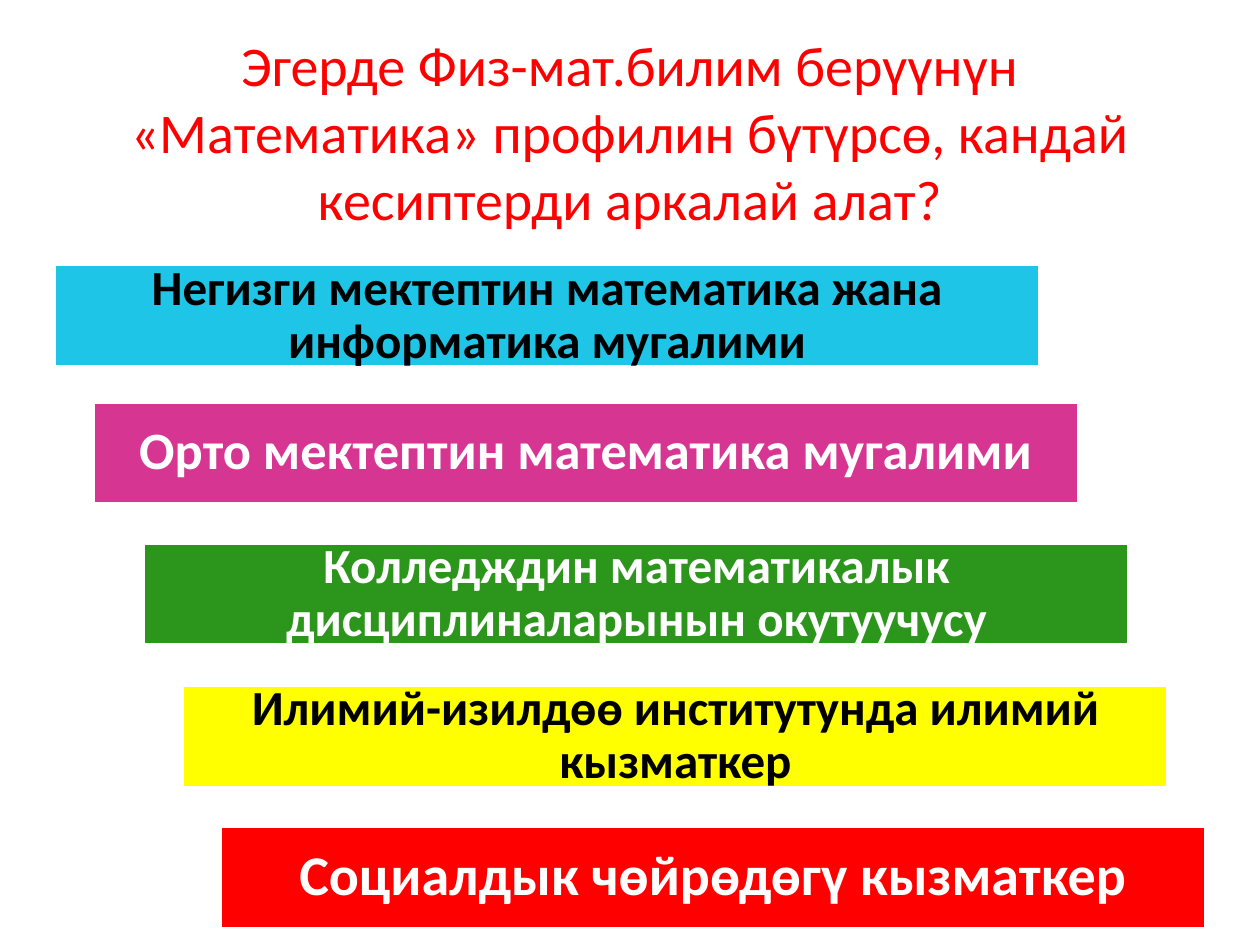
import pptx
import pptx.dml.color
import pptx.enum.shapes
import pptx.enum.text
import pptx.util
from pptx.util import Inches

RGBColor = pptx.dml.color.RGBColor
BLACK = RGBColor(0x00, 0x00, 0x00)
WHITE = RGBColor(0xFF, 0xFF, 0xFF)
RED = RGBColor(0xFF, 0x00, 0x00)
CYAN = RGBColor(0x1E, 0xC5, 0xE6)
PINK = RGBColor(0xD6, 0x36, 0x91)
GREEN = RGBColor(0x2C, 0x95, 0x1B)
YELLOW = RGBColor(0xFF, 0xFF, 0x00)

FONT = "Calibri"
TITLE = ("Эгерде Физ-мат.билим берүүнүн «Математика» профилин бүтүрсө, "
         "кандай кесиптерди аркалай алат?")
BAR_WIDTH, BAR_HEIGHT = 7.82, 0.81
# left, top, fill, text colour, text size, text
PROFESSIONS = [
    (0.43, 2.1, CYAN, BLACK, 28, "Негизги мектептин математика жана информатика мугалими"),
    (0.74, 3.19, PINK, WHITE, 30, "Орто мектептин математика мугалими"),
    (1.14, 4.31, GREEN, WHITE, 28, "Колледждин математикалык дисциплиналарынын окутуучусу"),
    (1.45, 5.44, YELLOW, BLACK, 28, "Илимий-изилдөө институтунда илимий кызматкер"),
    (1.75, 6.56, RED, WHITE, 32, "Социалдык чөйрөдөгү кызматкер"),
]


def write_text(shape, text, size, color, bold=False):
    """Fill the shape with one centred paragraph and return it."""
    frame = shape.text_frame
    frame.text = text
    frame.word_wrap = True
    frame.auto_size = pptx.enum.text.MSO_AUTO_SIZE.NONE
    frame.vertical_anchor = pptx.enum.text.MSO_ANCHOR.MIDDLE
    paragraph = frame.paragraphs[0]
    paragraph.alignment = pptx.enum.text.PP_ALIGN.CENTER
    paragraph.font.name = FONT
    paragraph.font.size = pptx.util.Pt(size)
    paragraph.font.bold = bold
    paragraph.font.color.rgb = color
    return paragraph


def place_title(slide, left, top, width, height):
    title = slide.shapes.title
    title.left, title.top = Inches(left), Inches(top)
    title.width, title.height = Inches(width), Inches(height)
    write_text(title, TITLE, 32, RED)


def add_bar(slide, left, top, width, height, fill, color, size, text):
    bar = slide.shapes.add_shape(
        pptx.enum.shapes.MSO_SHAPE.RECTANGLE,
        Inches(left), Inches(top), Inches(width), Inches(height))
    bar.shadow.inherit = False
    bar.fill.solid()
    bar.fill.fore_color.rgb = fill
    bar.line.color.rgb = WHITE
    bar.line.width = pptx.util.Pt(2)
    frame = bar.text_frame
    frame.margin_left = frame.margin_right = Inches(0.12)
    frame.margin_top = frame.margin_bottom = Inches(0.12)
    write_text(bar, text, size, color, bold=True).line_spacing = 0.9


def main():
    presentation = pptx.Presentation()
    presentation.slide_width = Inches(10)
    presentation.slide_height = Inches(7.5)
    slide = presentation.slides.add_slide(
        presentation.slide_layouts.get_by_name("Title Only"))
    place_title(slide, 0.5, 0.3, 9, 1.48)
    for left, top, *style in PROFESSIONS:
        add_bar(slide, left, top, BAR_WIDTH, BAR_HEIGHT, *style)
    presentation.save("out.pptx")


if __name__ == "__main__":
    main()
